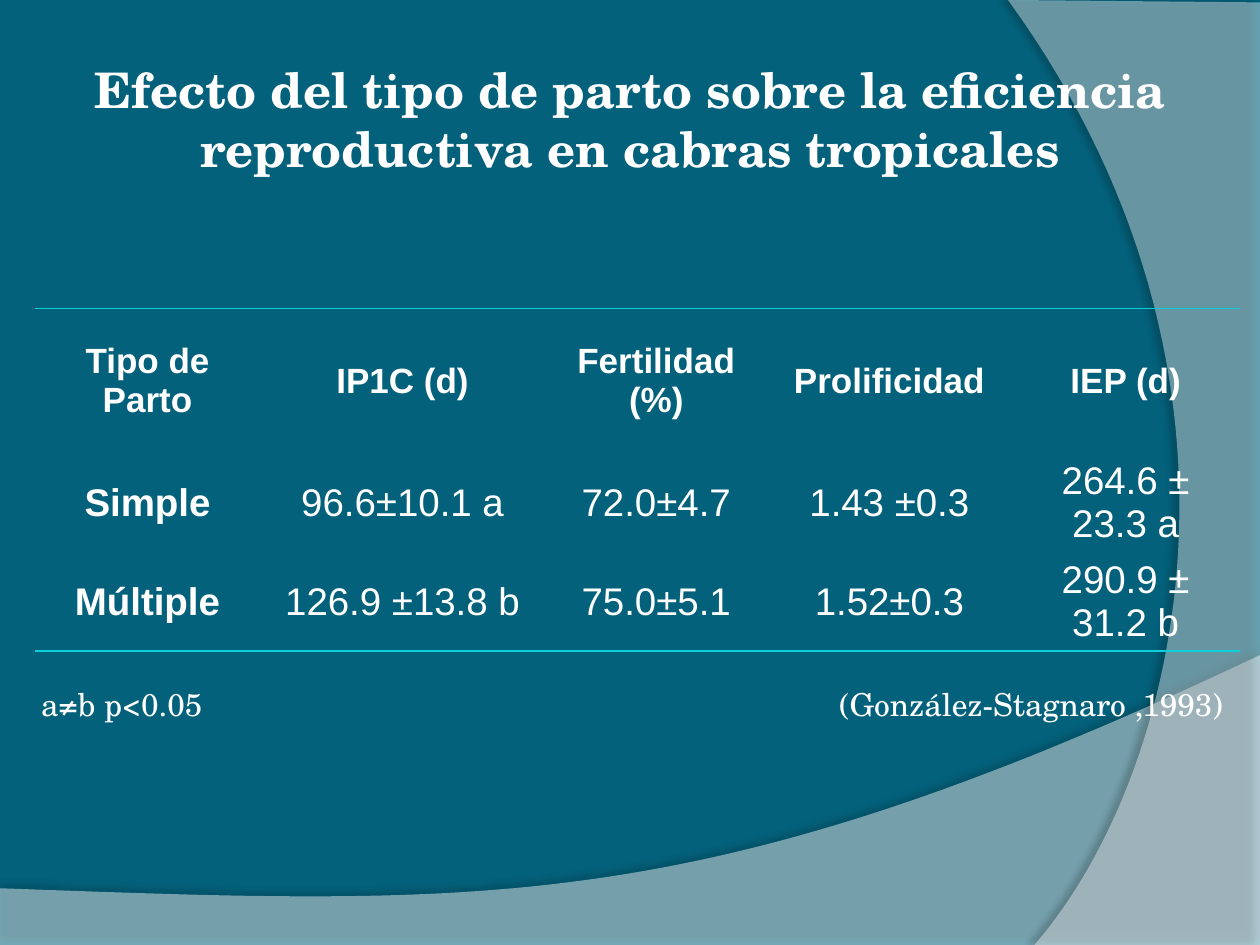
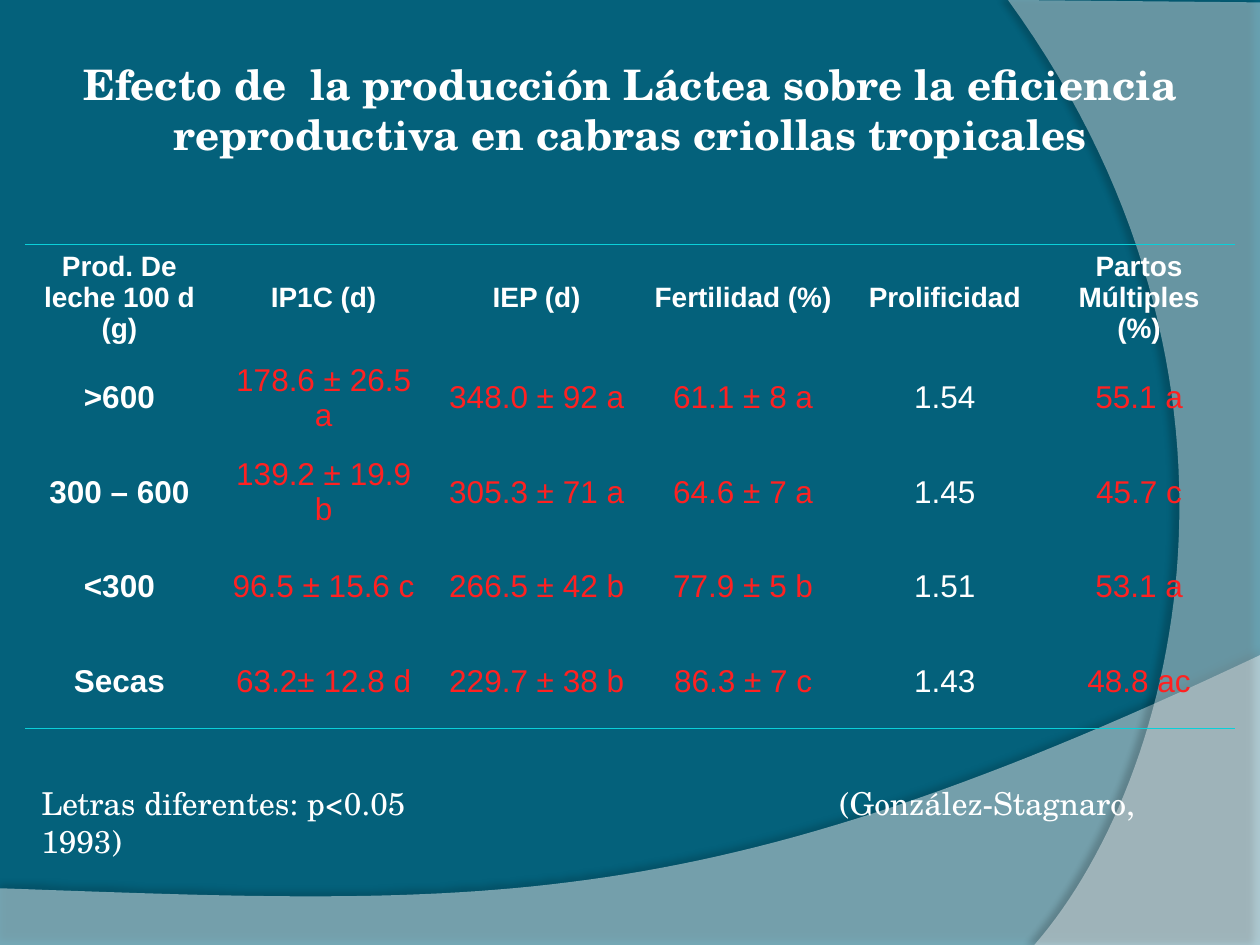
from lxml import etree
from pptx import Presentation
from pptx.dml.color import RGBColor
from pptx.enum.text import MSO_ANCHOR, MSO_AUTO_SIZE, PP_ALIGN
from pptx.oxml.ns import qn
from pptx.util import Pt

CENTER = PP_ALIGN.CENTER
MIDDLE = MSO_ANCHOR.MIDDLE
NO_AUTOFIT = MSO_AUTO_SIZE.NONE

TEAL = RGBColor(0x04, 0x61, 0x7B)
WHITE = RGBColor(0xFF, 0xFF, 0xFF)
BLACK = RGBColor(0x00, 0x00, 0x00)
CYAN = RGBColor(0x0B, 0xD0, 0xD9)
RED = RGBColor(0xFF, 0x21, 0x21)

SERIF = "TeX Gyre Schola"
SANS = "Arial"
SLIDE_WIDTH, SLIDE_HEIGHT = 720, 540
TITLE_ONLY = 5
NO_STYLE_NO_GRID = "{2D5ABB26-0587-4C30-8999-92F81FD0307C}"
SOURCE_TAB = 456
CURVE_STEPS = 60

BIRTH_ROWS = [
    ["Tipo de Parto", "IP1C (d)", "Fertilidad (%)", "Prolificidad", "IEP (d)"],
    ["Simple", "96.6±10.1 a", "72.0±4.7", "1.43 ±0.3", "264.6 ± 23.3 a"],
    ["Múltiple", "126.9 ±13.8 b", "75.0±5.1", "1.52±0.3", "290.9 ± 31.2 b"],
]
MILK_ROWS = [
    ["Prod. De leche 100 d (g)", "IP1C (d)", "IEP (d)", "Fertilidad (%)",
     "Prolificidad", "Partos Múltiples (%)"],
    [">600", "178.6 ± 26.5 a", "348.0 ± 92 a", "61.1 ± 8 a", "1.54", "55.1 a"],
    ["300 – 600", "139.2 ± 19.9 b", "305.3 ± 71 a", "64.6 ± 7 a", "1.45", "45.7 c"],
    ["<300", "96.5 ± 15.6 c", "266.5 ± 42 b", "77.9 ± 5 b", "1.51", "53.1 a"],
    ["Secas", "63.2± 12.8 d", "229.7 ± 38 b", "86.3 ± 7 c", "1.43", "48.8 ac"],
]


def add_child(parent, tag, **attributes):
    values = {name: str(value) for name, value in attributes.items()}
    return etree.SubElement(parent, qn(tag), values)


def format_font(font, color=WHITE, **values):
    for name, value in values.items():
        setattr(font, name, value)
    font.color.rgb = color


def bezier(start, control_1, control_2, end):
    """Return points along a cubic curve, without its start."""
    points = []
    for step in range(1, CURVE_STEPS + 1):
        t = step / CURVE_STEPS
        weights = ((1 - t) ** 3, 3 * t * (1 - t) ** 2, 3 * t * t * (1 - t), t ** 3)
        corners = (start, control_1, control_2, end)
        points.append(tuple(sum(weight * corner[axis] for weight, corner in zip(weights, corners))
                            for axis in (0, 1)))
    return points


def add_band(slide, points, opacity, shadow_opacity, shadow_distance, shadow_angle):
    start, *others = [(Pt(x), Pt(y)) for x, y in points]
    builder = slide.shapes.build_freeform(*start)
    builder.add_line_segments(others, close=True)
    band = builder.convert_to_shape()
    band.fill.solid()
    band.fill.fore_color.rgb = WHITE
    color = band.element.spPr.find(qn("a:solidFill"))[0]
    add_child(color, "a:alpha", val=opacity * 1000)
    band.line.fill.background()
    band.shadow.inherit = False
    effects = band.element.spPr.find(qn("a:effectLst"))
    shadow = add_child(effects, "a:outerShdw", blurRad=Pt(4), dist=Pt(shadow_distance),
                       dir=shadow_angle * 60000, algn="ctr", rotWithShape=0)
    shadow_color = add_child(shadow, "a:srgbClr", val=BLACK)
    add_child(shadow_color, "a:alpha", val=shadow_opacity * 1000)
    return band


def set_master_design(presentation, slide):
    """Draw the curved bands with the slide's builder and move them to the master."""
    master = presentation.slide_master
    master.background.fill.solid()
    master.background.fill.fore_color.rgb = TEAL

    lower_curve = bezier((720, 374.4), (402.5, 524.9), (281.5, 517.7), (0, 507.6))
    lower = [(0, SLIDE_HEIGHT), (SLIDE_WIDTH, SLIDE_HEIGHT), (720, 374.4), *lower_curve]
    right_curve = bezier((591.1, 540), (673.2, 445.7), (733, 216), (576, 0))
    right = [(720, 1.4), (SLIDE_WIDTH, SLIDE_HEIGHT), (591.1, 540), *right_curve]

    bands = [add_band(slide, lower, 45, 35, 3.5, 270),
             add_band(slide, right, 40, 45, 4, 180)]
    first_placeholder = master.shapes[0].element
    for number, band in enumerate(bands, start=101):
        band.element.nvSpPr.cNvPr.set("id", str(number))
        first_placeholder.addprevious(band.element)


def set_title(slide, text, top, height, size):
    title = slide.shapes.title
    title.left, title.top, title.width, title.height = Pt(36), Pt(top), Pt(648), Pt(height)
    frame = title.text_frame
    frame.text = text
    frame_format = {"word_wrap": True, "auto_size": NO_AUTOFIT, "vertical_anchor": MIDDLE}
    for side in ("left", "top", "right", "bottom"):
        frame_format[f"margin_{side}"] = Pt(3.6)
    for name, value in frame_format.items():
        setattr(frame, name, value)
    paragraph = frame.paragraphs[0]
    paragraph.alignment = CENTER
    format_font(paragraph.runs[0].font, name=SERIF, size=Pt(size), bold=True)


def set_borders(cell, ruled_sides):
    properties = cell._tc.get_or_add_tcPr()
    for side in "LRTB":
        if side in ruled_sides:
            line = add_child(properties, f"a:ln{side}", w=Pt(1))
            fill = add_child(line, "a:solidFill")
            add_child(fill, "a:srgbClr", val=CYAN)
        else:
            line = add_child(properties, f"a:ln{side}", w=0)
            add_child(line, "a:noFill")


def add_result_table(slide, rows, left, top, column_widths, row_heights,
                     header_size, body_size, red_columns=()):
    frame = slide.shapes.add_table(len(rows), len(rows[0]), Pt(left), Pt(top),
                                   Pt(sum(column_widths)), Pt(sum(row_heights)))
    table = frame.table
    table.first_row = table.horz_banding = False
    table._tbl.tblPr.find(qn("a:tableStyleId")).text = NO_STYLE_NO_GRID
    for column, width in zip(table.columns, column_widths):
        column.width = Pt(width)
    for row, height in zip(table.rows, row_heights):
        row.height = Pt(height)

    last_row = len(rows) - 1
    for row_index, row in enumerate(rows):
        is_header = row_index == 0
        ruled_sides = "T" if is_header else "B" if row_index == last_row else ""
        for column_index, text in enumerate(row):
            cell = table.cell(row_index, column_index)
            cell.text = text
            cell.vertical_anchor = MIDDLE
            set_borders(cell, ruled_sides)
            cell.fill.background()
            paragraph = cell.text_frame.paragraphs[0]
            paragraph.alignment = CENTER
            is_red = not is_header and column_index in red_columns
            format_font(paragraph.runs[0].font, RED if is_red else WHITE, name=SANS,
                        size=Pt(header_size if is_header else body_size),
                        bold=is_header or column_index == 0)


def add_footnote(slide, note, source, top, width):
    box = slide.shapes.add_textbox(Pt(16.5), Pt(top), Pt(width), Pt(29))
    box.text_frame.word_wrap = True
    paragraph = box.text_frame.paragraphs[0]
    paragraph.text = f"{note}\t{source}"
    tabs = add_child(paragraph._p.get_or_add_pPr(), "a:tabLst")
    add_child(tabs, "a:tab", pos=Pt(SOURCE_TAB), algn="l")
    for run in paragraph.runs:
        format_font(run.font, name=SERIF, size=Pt(18))


def main():
    presentation = Presentation()
    presentation.slide_width, presentation.slide_height = Pt(SLIDE_WIDTH), Pt(SLIDE_HEIGHT)
    layout = presentation.slide_layouts[TITLE_ONLY]

    birth_slide = presentation.slides.add_slide(layout)
    set_master_design(presentation, birth_slide)
    set_title(birth_slide, "Efecto del tipo de parto sobre la eficiencia reproductiva "
              "en cabras tropicales", top=22.5, height=90, size=28)
    add_result_table(birth_slide, BIRTH_ROWS, 19.8, 176.2, [129, 162.5, 127.5, 139, 131],
                     [83, 50.5, 50.5], header_size=20, body_size=22)
    add_footnote(birth_slide, "a≠b p<0.05", "(González-Stagnaro ,1993)", top=388, width=692)

    milk_slide = presentation.slides.add_slide(layout)
    set_title(milk_slide, "Efecto de  la producción Láctea sobre la eficiencia reproductiva "
              "en cabras criollas tropicales", top=28, height=68.5, size=24)
    add_result_table(milk_slide, MILK_ROWS, 14.2, 139.8, [108, 125.5, 118, 118, 112.5, 109.5],
                     [54.5] + [54] * 4, header_size=16, body_size=18, red_columns=(1, 2, 3, 5))
    add_footnote(milk_slide, "Letras diferentes: p<0.05", "(González-Stagnaro, 1993)",
                 top=444.5, width=686)

    presentation.save("out.pptx")


if __name__ == "__main__":
    main()
